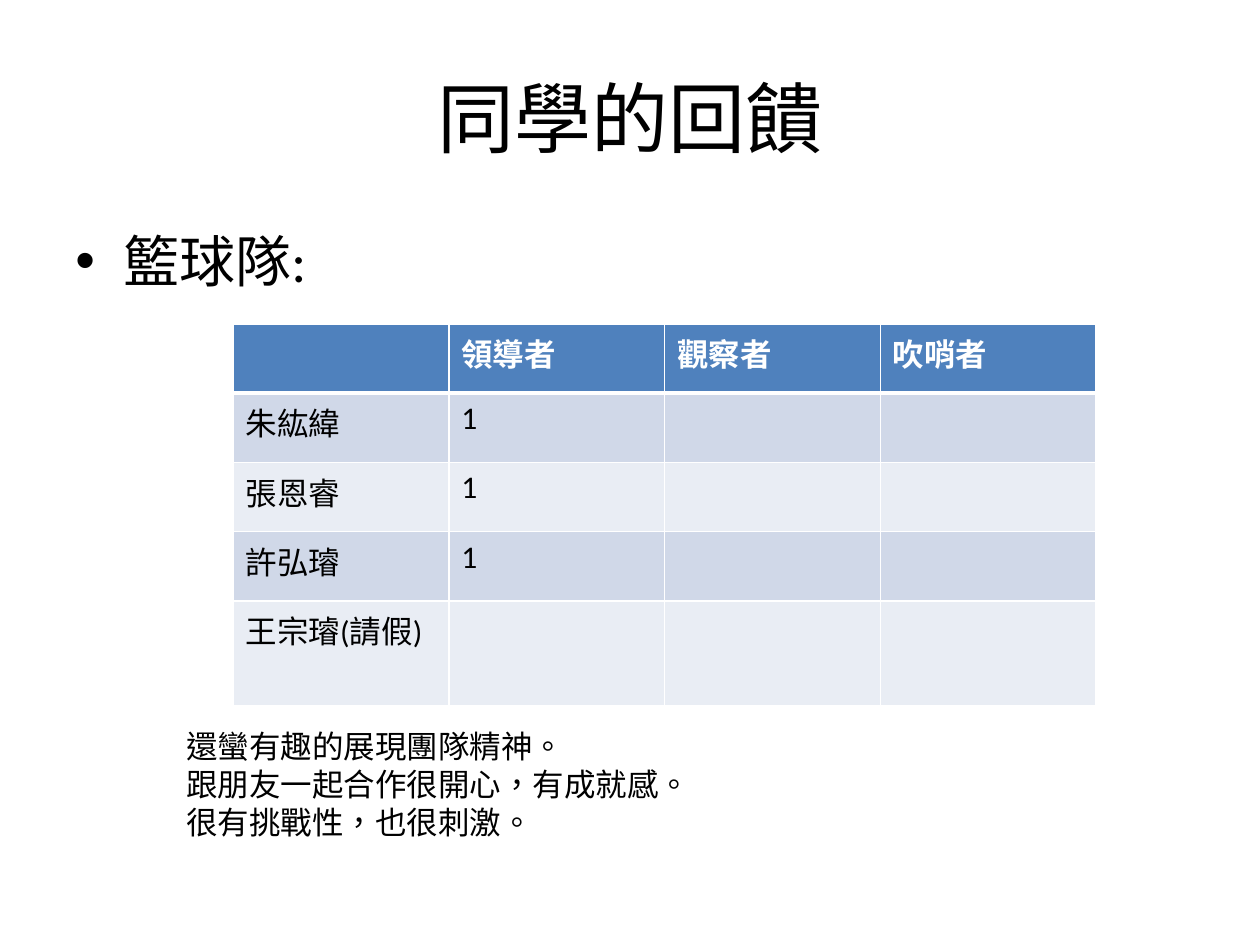
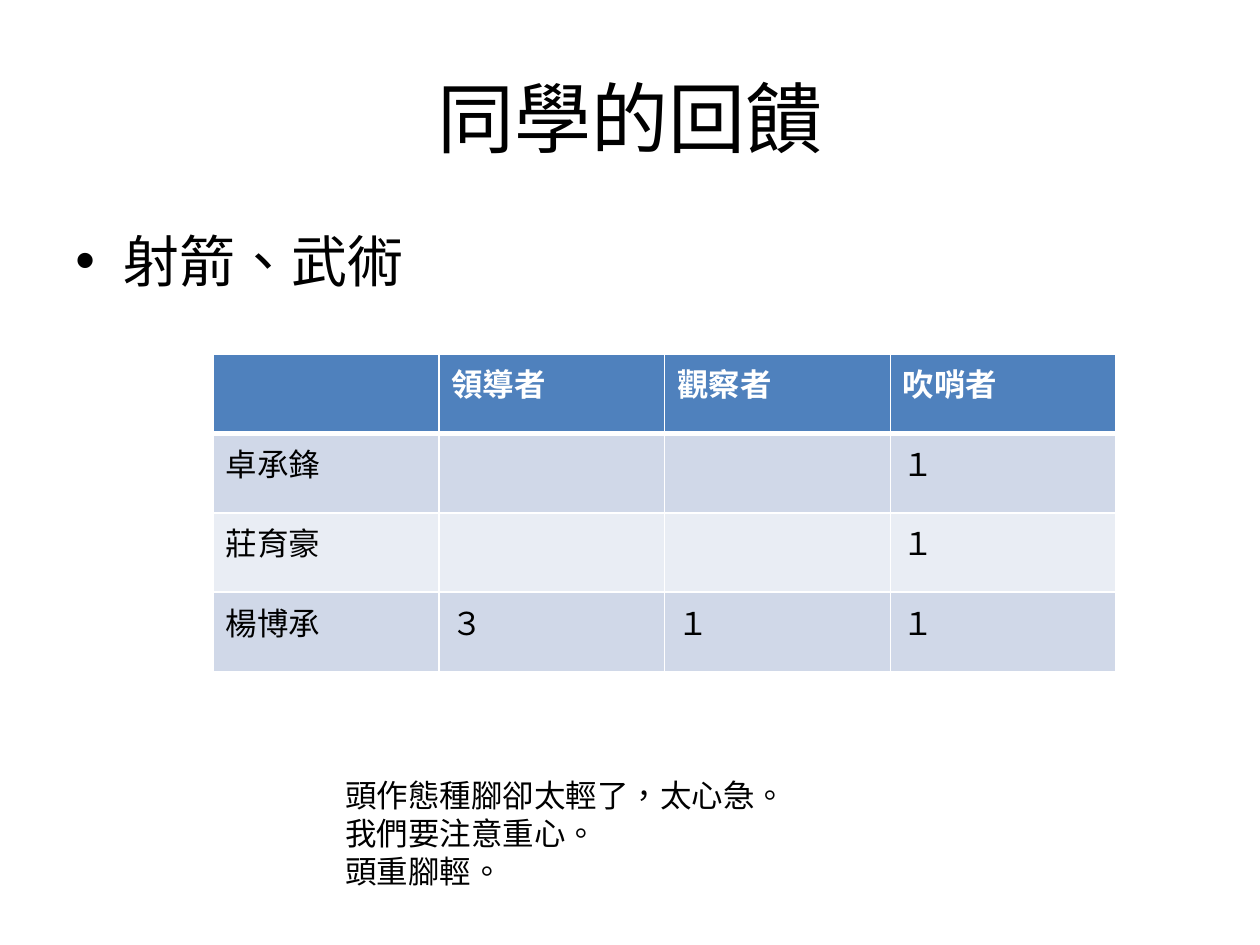
"""Builds two slides of classmates' feedback, each with a score table and comments."""
from lxml.etree import SubElement
from pptx import Presentation
from pptx.dml.color import RGBColor
from pptx.enum.lang import MSO_LANGUAGE_ID
from pptx.enum.text import MSO_ANCHOR, PP_ALIGN
from pptx.oxml.ns import qn
from pptx.util import Inches, Pt

BLACK = RGBColor(0x00, 0x00, 0x00)
WHITE = RGBColor(0xFF, 0xFF, 0xFF)
HEADER_BLUE = RGBColor(0x4F, 0x81, 0xBD)
ROW_BANDS = (RGBColor(0xD0, 0xD8, 0xE8), RGBColor(0xE9, 0xED, 0xF4))
FONT = "Calibri"
HANGING = Inches(0.38)
ROLES = ("", "領導者", "觀察者", "吹哨者")


class FeedbackDeck:
    def __init__(self):
        self.presentation = Presentation()
        self.presentation.slide_width = Inches(10)
        self.presentation.slide_height = Inches(7.5)
        self.slide = None

    def style(self, paragraph, size, color=BLACK, bold=False):
        font = paragraph.font
        font.name, font.size, font.bold = FONT, Pt(size), bold
        font.color.rgb = color
        for run in paragraph.runs:
            run.font.language_id = MSO_LANGUAGE_ID.TRADITIONAL_CHINESE

    def add_slide(self, heading):
        self.slide = self.presentation.slides.add_slide(self.presentation.slide_layouts[5])
        title = self.slide.shapes.title
        title.left, title.top = Inches(0.5), Inches(0.3)
        title.width, title.height = Inches(9), Inches(1.25)
        title.text_frame.text = heading
        title.text_frame.vertical_anchor = MSO_ANCHOR.MIDDLE
        paragraph = title.text_frame.paragraphs[0]
        paragraph.alignment = PP_ALIGN.CENTER
        self.style(paragraph, 44)

    def add_list(self, lines, left, top, width, height, size, marker, **marker_values):
        box = self.slide.shapes.add_textbox(
            Inches(left), Inches(top), Inches(width), Inches(height))
        frame = box.text_frame
        frame.word_wrap = True
        frame.text = "\n".join(lines)
        for paragraph in frame.paragraphs:
            properties = paragraph._p.get_or_add_pPr()
            properties.set("marL", str(HANGING))
            properties.set("indent", str(-HANGING))
            if marker == "a:buChar":
                SubElement(properties, qn("a:buFont"), typeface="Arial")
            SubElement(properties, qn(marker), **marker_values)
            self.style(paragraph, size)
        return frame

    def add_topic(self, topic):
        frame = self.add_list([topic], 0.5, 1.75, 9, 0.7, 32, "a:buChar", char="•")
        frame.paragraphs[0].space_before = Pt(6.4)

    def add_comments(self, comments, left, top, width):
        self.add_list(comments, left, top, width, 1.01, 18,
                      "a:buAutoNum", type="arabicDbPeriod")

    def underline_header(self, cell):
        properties = cell._tc.get_or_add_tcPr()
        border = SubElement(properties, qn("a:lnB"), w=str(Pt(3)))
        fill = SubElement(border, qn("a:solidFill"))
        SubElement(fill, qn("a:srgbClr"), val=str(WHITE))
        properties.insert(0, border)

    def add_scores(self, students, left, top, width, row_height, last_height):
        rows = [ROLES, *students]
        heights = [row_height] * len(students) + [last_height]
        table = self.slide.shapes.add_table(
            len(rows), len(ROLES), Inches(left), Inches(top),
            Inches(width), Inches(sum(heights))).table
        for row_index, (row, height) in enumerate(zip(rows, heights)):
            is_header = row_index == 0
            fill = HEADER_BLUE if is_header else ROW_BANDS[(row_index - 1) % 2]
            table.rows[row_index].height = Inches(height)
            for column, value in enumerate(row):
                cell = table.cell(row_index, column)
                cell.text = value
                cell.fill.solid()
                cell.fill.fore_color.rgb = fill
                if is_header:
                    self.underline_header(cell)
                self.style(cell.text_frame.paragraphs[0], 18,
                           WHITE if is_header else BLACK, is_header)

    def save(self):
        self.presentation.save("out.pptx")


def main():
    deck = FeedbackDeck()

    deck.add_slide("同學的回饋")
    deck.add_topic("籃球隊:")
    deck.add_scores([
        ("朱紘緯", "1", "", ""),
        ("張恩睿", "1", "", ""),
        ("許弘璿", "1", "", ""),
        ("王宗璿(請假)", "", "", ""),
    ], 1.85, 2.57, 6.85, 0.55, 0.83)
    deck.add_comments([
        "還蠻有趣的展現團隊精神。",
        "跟朋友一起合作很開心，有成就感。",
        "很有挑戰性，也很刺激。",
    ], 1.38, 5.72, 7.95)

    deck.add_slide("同學的回饋")
    deck.add_topic("射箭、武術")
    deck.add_scores([
        ("卓承鋒", "", "", "１"),
        ("莊育豪", "", "", "１"),
        ("楊博承", "３", "１", "１"),
    ], 1.69, 2.81, 7.17, 0.63, 0.63)
    deck.add_comments([
        "頭作態種腳卻太輕了，太心急。",
        "我們要注意重心。",
        "頭重腳輕。",
    ], 2.64, 6.11, 5.04)

    deck.save()


if __name__ == "__main__":
    main()
